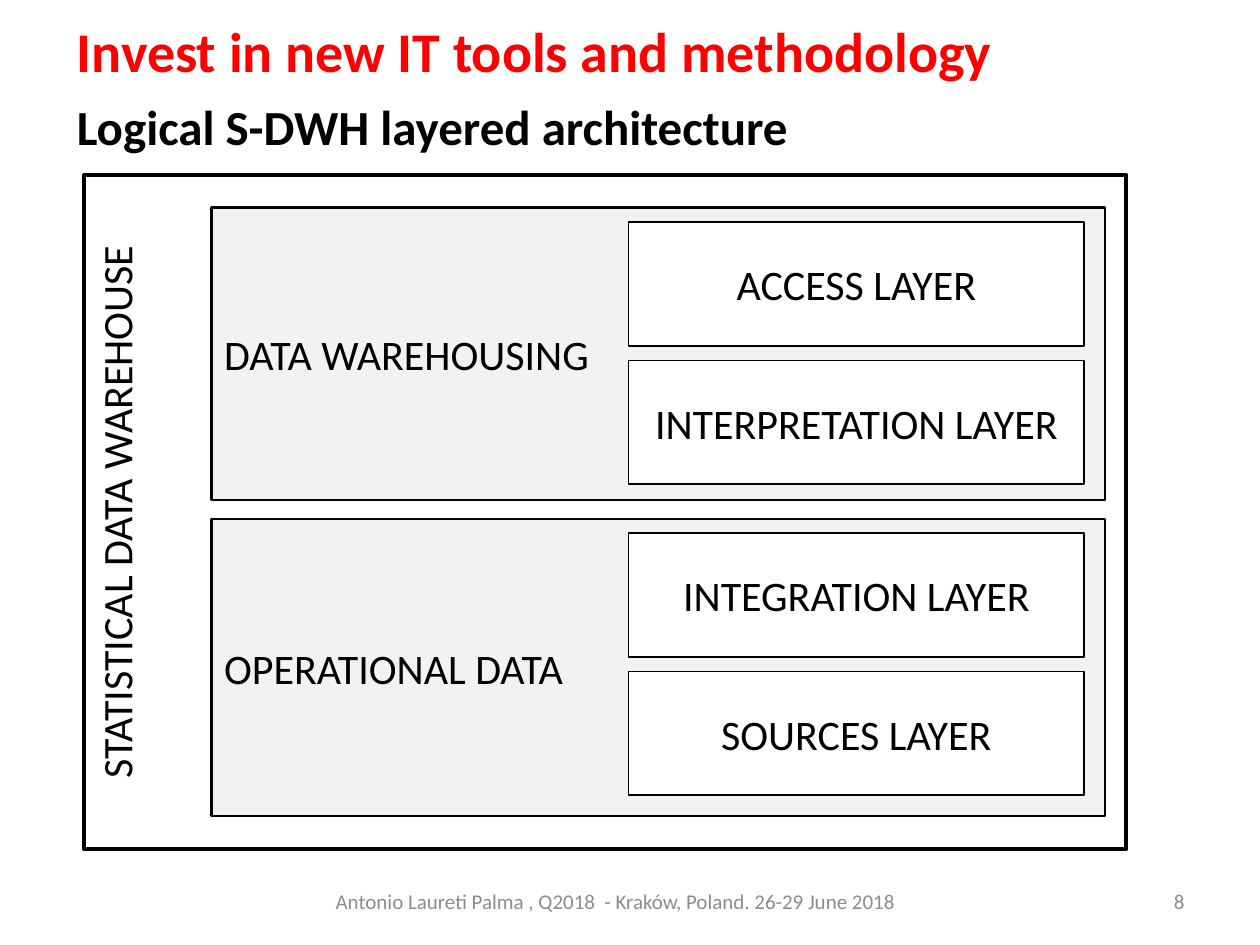
from dataclasses import dataclass

from pptx import Presentation
from pptx.dml.color import RGBColor
from pptx.enum.shapes import MSO_SHAPE
from pptx.enum.text import MSO_ANCHOR, PP_ALIGN
from pptx.util import Cm, Pt


@dataclass(frozen=True)
class Theme:
    font: str = "Calibri"
    black: str = "000000"
    white: str = "FFFFFF"
    panel: str = "F2F2F2"
    accent: str = "FF0000"
    muted: str = "8C8C8C"
    title: int = 32
    subtitle: int = 28
    body: int = 24
    footer: int = 12


@dataclass(frozen=True)
class Area:
    left: float
    top: float
    width: float
    height: float

    def lengths(self) -> list:
        return [Cm(value) for value in (self.left, self.top, self.width, self.height)]


@dataclass(frozen=True)
class Label:
    text: str
    size: int
    color: str = "000000"
    bold: bool = False
    align: PP_ALIGN = PP_ALIGN.LEFT
    anchor: MSO_ANCHOR = MSO_ANCHOR.MIDDLE
    wrap: bool = True


@dataclass(frozen=True)
class Group:
    name: str
    top: float
    height: float
    layers: tuple


THEME = Theme()
FRAME = Area(1.7, 3.53, 21.01, 13.59)
GROUP_LEFT, GROUP_WIDTH = 4.27, 18.01
LAYER_LEFT, LAYER_WIDTH, LAYER_HEIGHT = 12.67, 9.19, 2.49
LAYER_INSET, LAYER_STEP = 0.29, 2.79
GROUPS = (
    Group("DATA WAREHOUSING", 4.19, 5.89, ("ACCESS LAYER", "INTERPRETATION LAYER")),
    Group("OPERATIONAL DATA", 10.46, 5.99, ("INTEGRATION LAYER", "SOURCES LAYER")),
)
TEXTS = (
    (Area(1.3, 0.2, 19.13, 1.63),
     Label("Invest in new IT tools and methodology", THEME.title, THEME.accent,
           bold=True, anchor=MSO_ANCHOR.TOP, wrap=False)),
    (Area(1.3, 1.83, 19.99, 1.6),
     Label("Logical S-DWH layered architecture", THEME.subtitle, THEME.black,
           bold=True, anchor=MSO_ANCHOR.TOP)),
    (Area(0.51, 17.65, 23.8, 1.02),
     Label("Antonio Laureti Palma , Q2018  - Kraków, Poland. 26-29 June 2018",
           THEME.footer, THEME.muted, align=PP_ALIGN.CENTER)),
    (Area(18.21, 17.65, 5.92, 1.02),
     Label("8", THEME.footer, THEME.muted, align=PP_ALIGN.RIGHT)),
)


def set_all(target, formats: dict) -> None:
    for name, value in formats.items():
        setattr(target, name, value)


def write_label(box, label: Label) -> None:
    frame = box.text_frame
    set_all(frame, {"word_wrap": label.wrap, "vertical_anchor": label.anchor})
    para = frame.paragraphs[0]
    para.alignment = label.align
    span = para.add_run()
    span.text = label.text
    set_all(span.font, {"name": THEME.font, "size": Pt(label.size), "bold": label.bold})
    span.font.color.rgb = RGBColor.from_string(label.color)


def add_text(page, area: Area, label: Label) -> None:
    write_label(page.shapes.add_textbox(*area.lengths()), label)


def add_box(page, area: Area, label: Label, line_width: float, fill: str = ""):
    box = page.shapes.add_shape(MSO_SHAPE.RECTANGLE, *area.lengths())
    box.shadow.inherit = False
    if fill:
        box.fill.solid()
        box.fill.fore_color.rgb = RGBColor.from_string(fill)
    else:
        box.fill.background()
    box.line.width = Pt(line_width)
    box.line.color.rgb = RGBColor.from_string(THEME.black)
    write_label(box, label)
    return box


def add_group(page, group: Group) -> None:
    area = Area(GROUP_LEFT, group.top, GROUP_WIDTH, group.height)
    add_box(page, area, Label(group.name, THEME.body), 1.5, THEME.panel)
    for index, name in enumerate(group.layers):
        top = group.top + LAYER_INSET + index * LAYER_STEP
        area = Area(LAYER_LEFT, top, LAYER_WIDTH, LAYER_HEIGHT)
        label = Label(name, THEME.body, align=PP_ALIGN.CENTER)
        add_box(page, area, label, 1, THEME.white)


def main() -> None:
    deck = Presentation()
    set_all(deck, {"slide_width": Cm(25.4), "slide_height": Cm(19.05)})
    page = deck.slides.add_slide(deck.slide_layouts[6])
    label = Label("STATISTICAL DATA WAREHOUSE", THEME.body,
                  align=PP_ALIGN.CENTER, anchor=MSO_ANCHOR.TOP)
    warehouse = add_box(page, FRAME, label, 2.25)
    warehouse.text_frame._txBody.bodyPr.set("vert", "vert270")
    for group in GROUPS:
        add_group(page, group)
    for area, label in TEXTS:
        add_text(page, area, label)
    deck.save("out.pptx")


if __name__ == "__main__":
    main()
